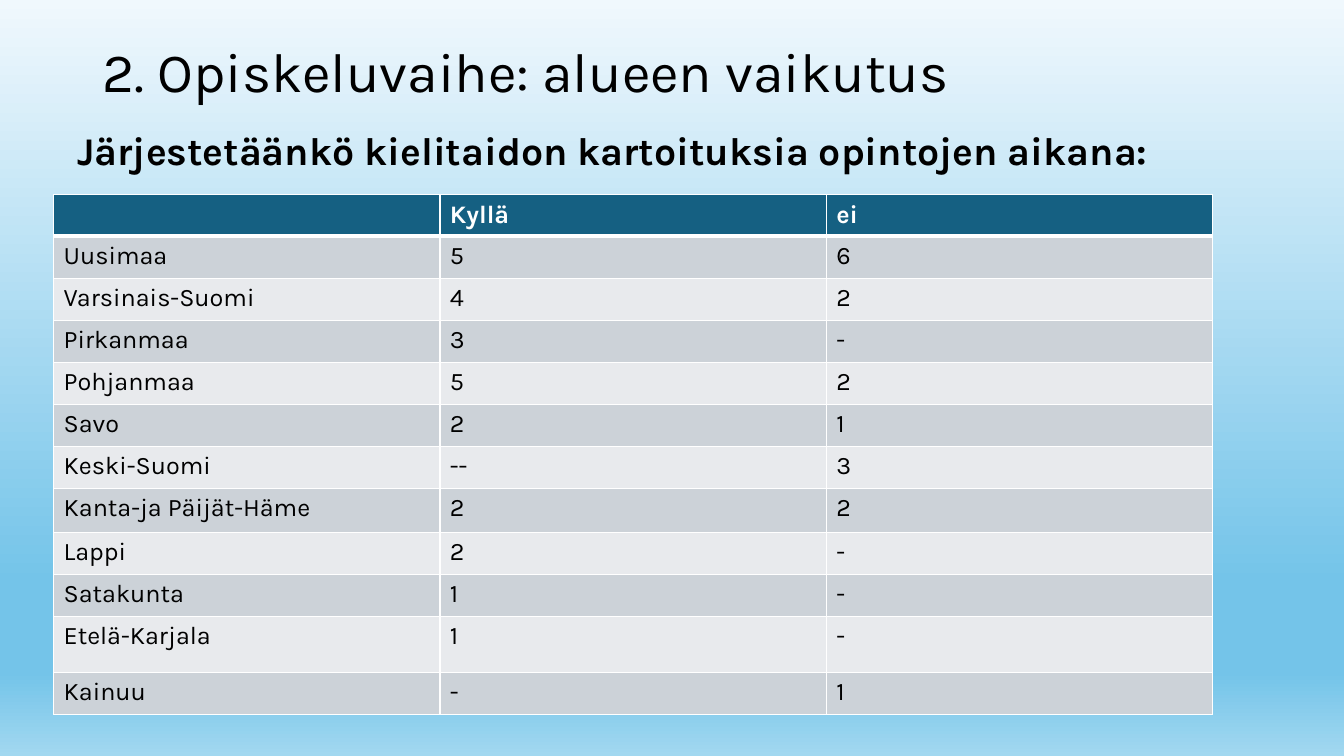
from dataclasses import dataclass

from pptx import Presentation
from pptx.dml.color import RGBColor
from pptx.enum.text import MSO_ANCHOR
from pptx.oxml import parse_xml
from pptx.oxml.ns import nsdecls, qn
from pptx.util import Cm, Pt


@dataclass(frozen=True)
class Theme:
    font: str = "Karla"
    text: str = "000000"
    white: str = "FFFFFF"
    header: str = "156082"
    bands: tuple = ("CCD2D8", "E8EAED")
    sky: tuple = ((0, "F0F8FD"), (77, "74C4E9"), (89, "74C4E9"), (100, "A2D8F0"))
    title_size: float = 39.6
    question_size: float = 28
    table_size: float = 18


THEME = Theme()
HEADINGS = ("", "Kyllä", "ei")
REGIONS = (
    ("Uusimaa", "5", "6"),
    ("Varsinais-Suomi", "4", "2"),
    ("Pirkanmaa", "3", "-"),
    ("Pohjanmaa", "5", "2"),
    ("Savo", "2", "1"),
    ("Keski-Suomi", "--", "3"),
    ("Kanta-ja Päijät-Häme", "2", "2"),
    ("Lappi", "2", "-"),
    ("Satakunta", "1", "-"),
    ("Etelä-Karjala", "1", "-"),
    ("Kainuu", "-", "1"),
)
ROW_HEIGHT = 1.06
SPECIAL_HEIGHTS = {"": 1.04, "Kanta-ja Päijät-Häme": 1.11, "Etelä-Karjala": 1.41}


def paint_background(slide):
    """Fill the slide with the sky gradient, from top to bottom."""
    slide.background.fill.gradient()
    gradient = slide.element.find(".//" + qn("a:gradFill"))
    stops = "".join(
        f'<a:gs pos="{percent * 1000}"><a:srgbClr val="{color}"/></a:gs>'
        for percent, color in THEME.sky
    )
    gradient.replace(
        gradient.find(qn("a:gsLst")),
        parse_xml(f'<a:gsLst {nsdecls("a")}>{stops}</a:gsLst>'),
    )
    gradient.find(qn("a:lin")).set("ang", str(90 * 60000))


def style_paragraph(para, size, color, bold=False):
    para.font.name = THEME.font
    para.font.size = Pt(size)
    para.font.bold = bold
    para.font.color.rgb = RGBColor.from_string(color)


def add_heading(slide, text, bounds, size, bold=False, anchor=MSO_ANCHOR.TOP):
    box = slide.shapes.add_textbox(*map(Cm, bounds))
    frame = box.text_frame
    frame.word_wrap = True
    frame.vertical_anchor = anchor
    para = frame.paragraphs[0]
    para.text = text
    para.line_spacing = 0.9
    style_paragraph(para, size, THEME.text, bold)


def border_cell(cell, bottom_width):
    """Draw white cell borders; they must come before the fill in the XML."""
    properties = cell._tc.get_or_add_tcPr()
    widths = {"lnL": 1, "lnR": 1, "lnT": 1, "lnB": bottom_width}
    for index, (side, width) in enumerate(widths.items()):
        properties.insert(index, parse_xml(
            f'<a:{side} {nsdecls("a")} w="{Pt(width)}"><a:solidFill>'
            f'<a:srgbClr val="{THEME.white}"/></a:solidFill></a:{side}>'
        ))


def fill_cell(cell, text, fill, color, is_header):
    cell.fill.solid()
    cell.fill.fore_color.rgb = RGBColor.from_string(fill)
    border_cell(cell, bottom_width=3 if is_header else 1)
    para = cell.text_frame.paragraphs[0]
    para.text = text
    style_paragraph(para, THEME.table_size, color, bold=is_header)


def add_region_table(slide, left, top, width):
    rows = (HEADINGS, *REGIONS)
    heights = [SPECIAL_HEIGHTS.get(row[0], ROW_HEIGHT) for row in rows]
    bounds = (left, top, width, sum(heights))
    frame = slide.shapes.add_table(len(rows), len(HEADINGS), *map(Cm, bounds))
    table = frame.table
    for column in table.columns:
        column.width = Cm(width / len(HEADINGS))
    for row_index, (row, height) in enumerate(zip(rows, heights)):
        table.rows[row_index].height = Cm(height)
        is_header = row_index == 0
        fill = THEME.header if is_header else THEME.bands[(row_index - 1) % 2]
        color = THEME.white if is_header else THEME.text
        for column_index, text in enumerate(row):
            fill_cell(table.cell(row_index, column_index), text, fill, color, is_header)


def main():
    deck = Presentation()
    deck.slide_width, deck.slide_height = Cm(33.87), Cm(19.05)
    slide = deck.slides.add_slide(deck.slide_layouts[6])
    paint_background(slide)
    add_heading(slide, "2. Opiskeluvaihe: alueen vaikutus",
                (2.33, 1.02, 29.21, 1.73), THEME.title_size, anchor=MSO_ANCHOR.MIDDLE)
    add_heading(slide, "Järjestetäänkö kielitaidon kartoituksia opintojen aikana:",
                (1.7, 3.2, 30.3, 13.94), THEME.question_size, bold=True)
    add_region_table(slide, left=1.35, top=4.91, width=29.21)
    deck.save("out.pptx")


if __name__ == "__main__":
    main()
